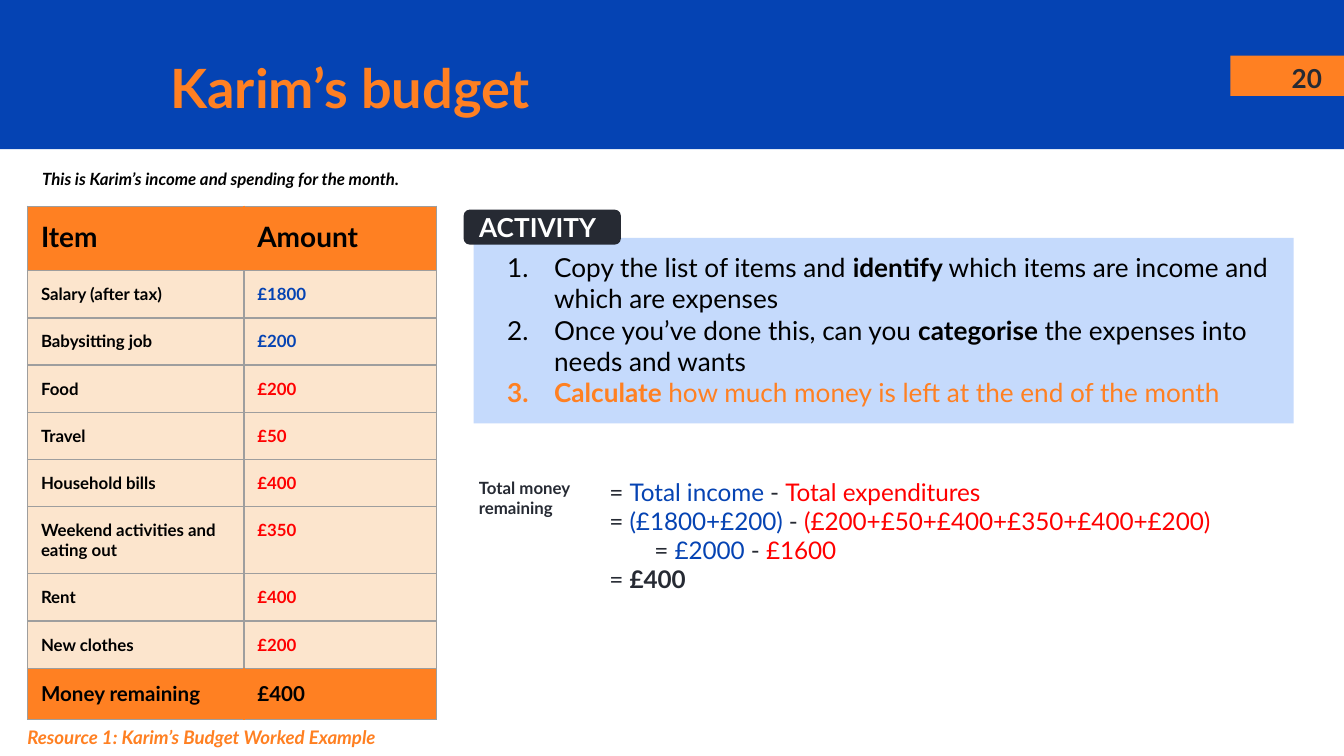
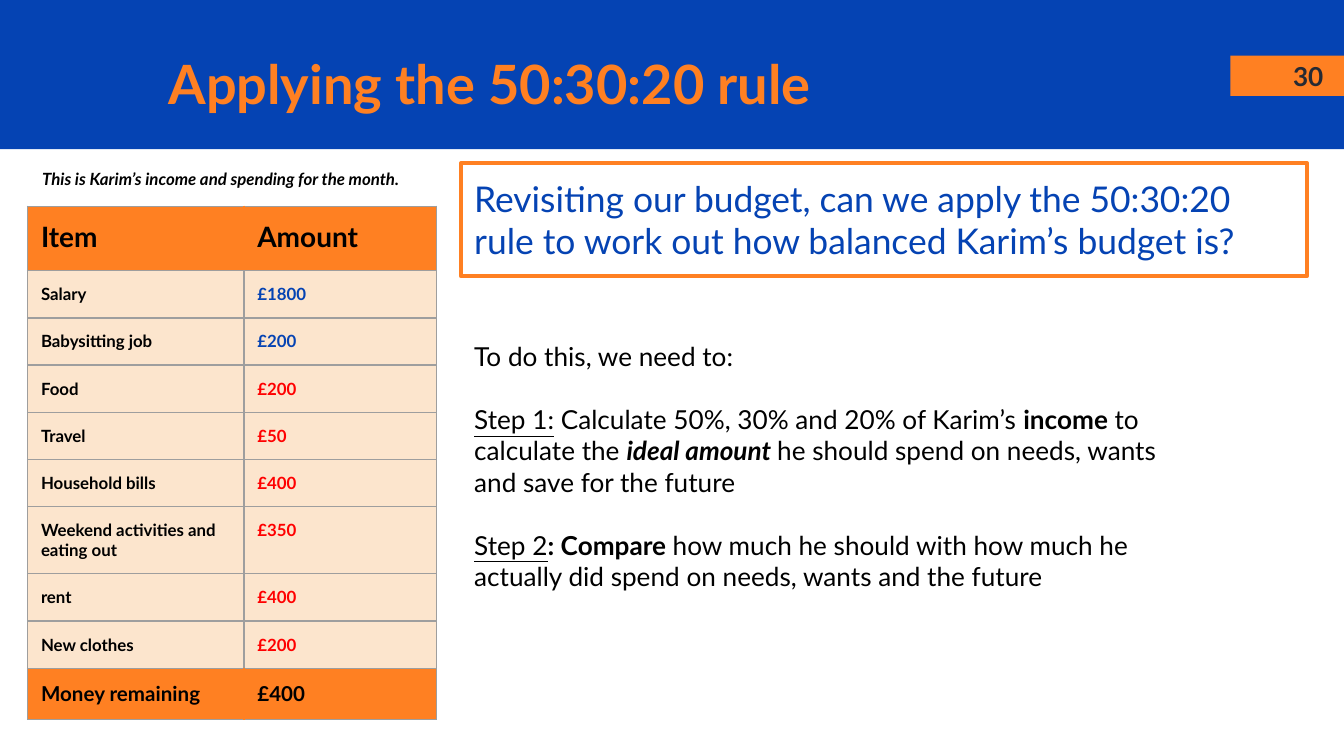
from dataclasses import dataclass, field
from typing import Optional

from lxml import etree
from pptx import Presentation
from pptx import util as u
from pptx.dml import color
from pptx.enum import shapes, text
from pptx.oxml import ns

PX = 4572
FONT = "Lato"
HEX = {
    "blue": "0543B3",
    "orange": "FF8022",
    "dark": "262A33",
    "black": "000000",
    "white": "FFFFFF",
    "red": "FF0000",
    "cream": "FCE5CD",
    "pale": "C5DAFC",
    "grey": "9E9E9E",
}
WIDE, HIGH = 2000, 1125
PAD = 20
COLS = (322, 286)
HEAD, ROW, TALL, FOOT = 96, 70, 100, 76
TOTAL = "£400"


@dataclass
class Run:
    text: str
    hue: Optional[str] = None
    bold: Optional[bool] = None
    slant: Optional[bool] = None
    under: Optional[bool] = None


@dataclass
class Para:
    runs: list[Run]
    size: float
    hue: str = "black"
    bold: bool = False
    slant: bool = False
    align: text.PP_ALIGN = text.PP_ALIGN.LEFT
    lead: float = 1.0
    before: float = 0
    left: int = 0
    hang: int = 0
    mark: Optional[str] = None


@dataclass
class Box:
    x: int
    y: int
    w: int
    h: int
    paras: list[Para] = field(default_factory=list)
    fill: Optional[str] = None
    line: Optional[str] = None
    weight: float = 0.75
    form: Optional[shapes.MSO_SHAPE] = None
    mid: bool = False
    top: int = PAD


def px(n: int) -> u.Emu:
    return u.Emu(n * PX)


def rgb(name: str) -> color.RGBColor:
    return color.RGBColor.from_string(HEX[name])


def ink(node, name: str) -> None:
    etree.SubElement(node, ns.qn("a:srgbClr")).set("val", HEX[name])


def write(par, data: Para) -> None:
    props = par._p.get_or_add_pPr()
    if data.left:
        props.set("marL", str(px(data.left)))
        props.set("indent", str(px(data.hang)))
    par.alignment = data.align
    par.line_spacing = data.lead
    if data.before:
        par.space_before = u.Pt(data.before)
    if data.mark:
        ink(etree.SubElement(props, ns.qn("a:buClr")), data.mark)
        num = etree.SubElement(props, ns.qn("a:buAutoNum"))
        num.set("type", "arabicPeriod")
    font = par.font
    font.name, font.size = FONT, u.Pt(data.size)
    font.bold, font.italic = data.bold, data.slant
    font.color.rgb = rgb(data.hue)
    for item in data.runs:
        run = par.add_run()
        run.text = item.text
        if item.hue:
            run.font.color.rgb = rgb(item.hue)
        if item.bold is not None:
            run.font.bold = item.bold
        if item.slant is not None:
            run.font.italic = item.slant
        if item.under is not None:
            run.font.underline = item.under


def draw(slide, box: Box) -> None:
    area = [px(n) for n in (box.x, box.y, box.w, box.h)]
    if box.fill:
        shape = slide.shapes.add_shape(box.form or shapes.MSO_SHAPE.RECTANGLE, *area)
        shape.shadow.inherit = False
        shape.fill.solid()
        shape.fill.fore_color.rgb = rgb(box.fill)
        if box.line:
            shape.line.color.rgb = rgb(box.line)
            shape.line.width = u.Pt(box.weight)
        else:
            shape.line.fill.background()
    else:
        shape = slide.shapes.add_textbox(*area)
    frame = shape.text_frame
    frame.word_wrap = True
    frame.margin_left = frame.margin_right = frame.margin_bottom = px(PAD)
    frame.margin_top = px(box.top)
    anchor = text.MSO_ANCHOR
    frame.vertical_anchor = anchor.MIDDLE if box.mid else anchor.TOP
    for i, data in enumerate(box.paras):
        write(frame.add_paragraph() if i else frame.paragraphs[0], data)


def edge(cell, inner: str, hue: str) -> None:
    props = cell._tc.get_or_add_tcPr()
    for side in "LRTB":
        line = etree.SubElement(props, ns.qn(f"a:ln{side}"))
        line.set("w", str(u.Pt(0.75)))
        ink(etree.SubElement(line, ns.qn("a:solidFill")), hue if side == inner else "grey")


def budget(slide, pay: str, rent: str) -> None:
    rows = [
        ("Item", "Amount", "black", 15, HEAD),
        (pay, "£1800", "blue", 9, ROW),
        ("Babysitting job", "£200", "blue", 9, ROW),
        ("Food", "£200", "red", 9, ROW),
        ("Travel", "£50", "red", 9, ROW),
        ("Household bills", "£400", "red", 9, ROW),
        ("Weekend activities and eating out", "£350", "red", 9, TALL),
        (rent, "£400", "red", 9, ROW),
        ("New clothes", "£200", "red", 9, ROW),
        ("Money remaining", TOTAL, "black", 11, FOOT),
    ]
    high = sum(row[-1] for row in rows)
    area = [px(n) for n in (41, 307, sum(COLS), high)]
    table = slide.shapes.add_table(len(rows), len(COLS), *area).table
    table.first_row = table.horz_banding = False
    for col, wide in zip(table.columns, COLS):
        col.width = px(wide)
    for r, (item, cost, hue, size, tall) in enumerate(rows):
        table.rows[r].height = px(tall)
        plain = size == 9
        for c, (words, tone) in enumerate(((item, "black"), (cost, hue))):
            cell = table.cell(r, c)
            cell.margin_left = cell.margin_right = px(PAD)
            cell.margin_top = cell.margin_bottom = px(PAD)
            edge(cell, "RL"[c], "grey" if plain else "orange")
            cell.fill.solid()
            cell.fill.fore_color.rgb = rgb("cream" if plain else "orange")
            write(cell.text_frame.paragraphs[0], Para([Run(words)], size, tone, True))


def base(deck, title: Box, name: str, page: Box, num: str):
    slide = deck.slides.add_slide(deck.slide_layouts[6])
    title.paras = [Para([Run(name)], 29, "orange", True, lead=1.15)]
    page.paras = [Para([Run(num)], 14, "dark", True, align=text.PP_ALIGN.RIGHT)]
    page.mid = True
    intro = Run("This is Karim’s income and spending for the month.")
    for box in (
        Box(0, 0, WIDE, 222, fill="blue"),
        Box(1831, 83, 169, 60, fill="orange"),
        page,
        title,
        Box(43, 236, 618, 70, [Para([intro], 9, bold=True, slant=True)]),
    ):
        draw(slide, box)
    return slide


def sums(runs: list[Run], left: int = 201) -> Para:
    return Para([Run("= "), *runs], 13, "dark", left=left)


def task(runs: list[Run], hue: str = "black") -> Para:
    return Para(runs, 14, hue, left=100, hang=-70, mark=hue)


def first(deck) -> None:
    slide = base(deck, Box(234, 46, 1528, 138), "Karim’s budget", Box(1829, 86, 158, 60), "20")
    budget(slide, "Salary (after tax)", "Rent")
    work = [
        sums([Run("Total income ", "blue"), Run("- "), Run("Total expenditures", "red")]),
        sums([
            Run("(£1800+£200) ", "blue"),
            Run("- "),
            Run("(£200+£50+£400+£350+£400+£200)", "red"),
        ]),
        sums([Run("£2000 ", "blue"), Run("-"), Run(" £1600", "red")], 268),
        sums([Run(TOTAL, bold=True)]),
    ]
    label = [Para([Run(s)], 9, "dark", True) for s in ("Total money", "remaining")]
    note = Run("Resource 1: Karim’s Budget Worked Example")
    tasks = [
        task([
            Run("Copy the list of items and "),
            Run("identify ", bold=True),
            Run("which items are income and which are expenses"),
        ]),
        task([
            Run("Once you’ve done this, can you "),
            Run("categorise ", bold=True),
            Run("the expenses into needs and wants"),
        ]),
        task([
            Run("Calculate ", bold=True),
            Run("how much money is left at the end of the month"),
        ], "orange"),
    ]
    tag = [Para([Run("ACTIVITY")], 14, "white", True)]
    form = shapes.MSO_SHAPE.ROUNDED_RECTANGLE
    for box in (
        Box(686, 610, 1302, 344, work, "white", top=100),
        Box(693, 691, 192, 100, label, "white"),
        Box(21, 1056, 786, 74, [Para([note], 10, "orange", True, True, lead=1.15)]),
        Box(705, 354, 1220, 276, tasks, "pale"),
        Box(691, 313, 232, 50, tag, "dark", "dark", form=form, mid=True),
    ):
        draw(slide, box)


def second(deck) -> None:
    slide = base(deck, Box(231, 40, 1438, 138), "Applying the 50:30:20 rule", Box(1831, 83, 158, 60), "30")
    ask = Run("Revisiting our budget, can we apply the 50:30:20 rule to work out how balanced Karim’s budget is?")
    steps = [
        Para([Run("To do this, we need to:")], 14),
        Para([
            Run("Step 1:", under=True),
            Run(" Calculate 50%, 30% and 20% of Karim’s "),
            Run("income ", bold=True),
            Run("to calculate the "),
            Run("ideal amount ", bold=True, slant=True),
            Run("he should spend on needs, wants and save for the future"),
        ], 14, before=16.8),
        Para([
            Run("Step 2", under=True),
            Run(": Compare ", bold=True),
            Run("how much he should with how much he actually did spend on needs, wants and the future"),
        ], 14, before=16.8),
    ]
    draw(slide, Box(686, 243, 1259, 168, [Para([ask], 19, "blue")], "white", "orange", 2.25))
    draw(slide, Box(686, 440, 1082, 464, steps, top=67))
    budget(slide, "Salary", "rent")


def main() -> None:
    deck = Presentation()
    deck.slide_width, deck.slide_height = px(WIDE), px(HIGH)
    first(deck)
    second(deck)
    deck.save("out.pptx")


if __name__ == "__main__":
    main()
